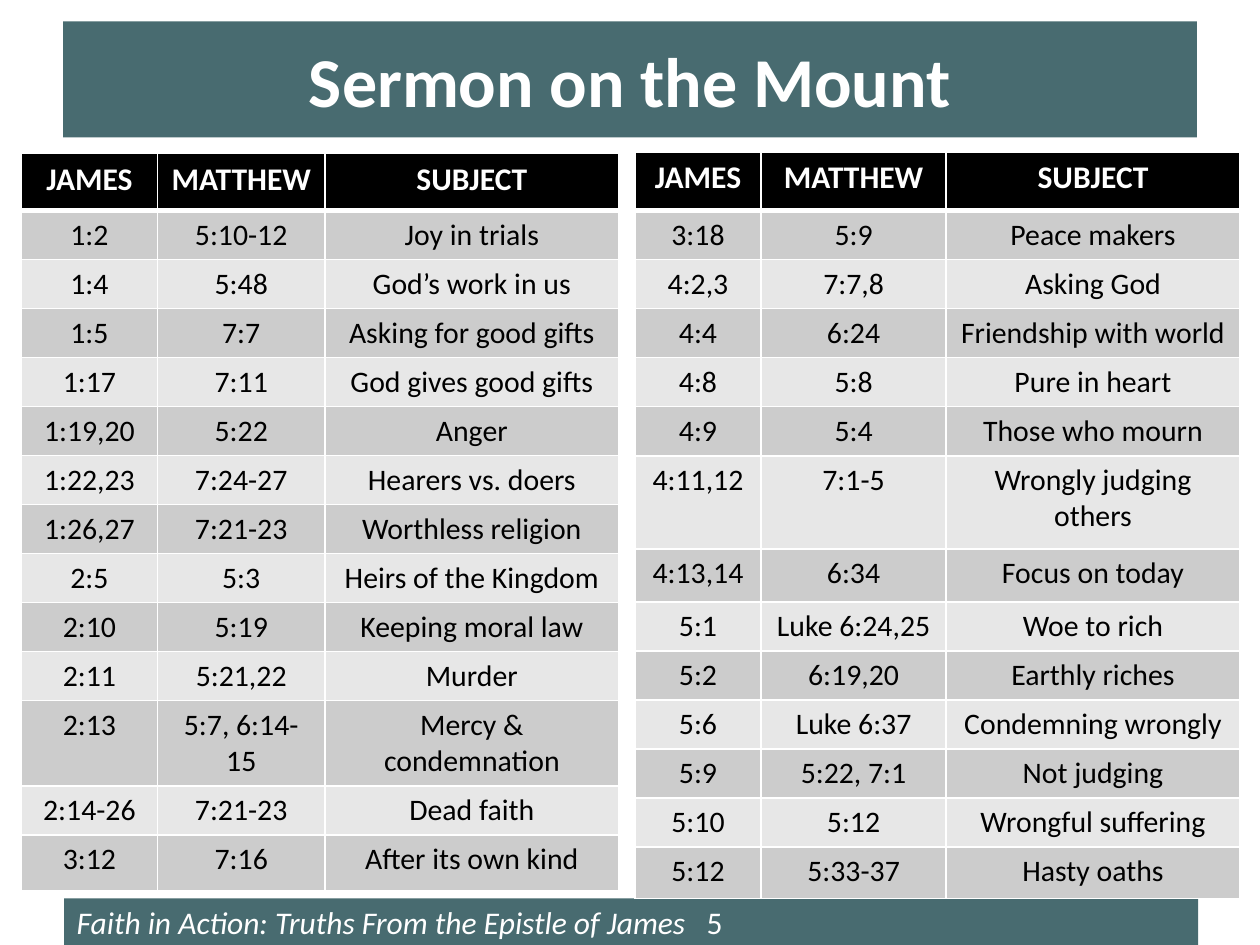
from pptx import Presentation
from pptx.dml.color import RGBColor
from pptx.enum.shapes import MSO_SHAPE
from pptx.enum.text import MSO_ANCHOR, PP_ALIGN
from pptx.oxml.ns import qn
from pptx.util import Inches, Pt
from lxml.etree import SubElement

COLORS = {"teal": "486B70", "white": "FFFFFF", "black": "000000",
          "dark_band": "CCCCCC", "light_band": "E7E7E7"}
FORMATS = {
    "title": {"size": Pt(40), "bold": True, "color": "white"},
    "footer": {"size": Pt(18), "italic": True, "color": "white"},
    "page_number": {"size": Pt(18), "italic": False, "color": "white"},
    "header": {"size": Pt(18), "bold": True, "color": "white"},
    "body": {"size": Pt(17), "bold": False, "color": "black"},
}
HEADINGS = ("JAMES", "MATTHEW", "SUBJECT")
EARLY_PARALLELS = [
    ("1:2", "5:10-12", "Joy in trials"),
    ("1:4", "5:48", "God’s work in us"),
    ("1:5", "7:7", "Asking for good gifts"),
    ("1:17", "7:11", "God gives good gifts"),
    ("1:19,20", "5:22", "Anger"),
    ("1:22,23", "7:24-27", "Hearers vs. doers"),
    ("1:26,27", "7:21-23", "Worthless religion"),
    ("2:5", "5:3", "Heirs of the Kingdom"),
    ("2:10", "5:19", "Keeping moral law"),
    ("2:11", "5:21,22", "Murder"),
    ("2:13", "5:7, 6:14-15", "Mercy & condemnation"),
    ("2:14-26", "7:21-23", "Dead faith"),
    ("3:12", "7:16", "After its own kind"),
]
LATE_PARALLELS = [
    ("3:18", "5:9", "Peace makers"),
    ("4:2,3", "7:7,8", "Asking God"),
    ("4:4", "6:24", "Friendship with world"),
    ("4:8", "5:8", "Pure in heart"),
    ("4:9", "5:4", "Those who mourn"),
    ("4:11,12", "7:1-5", "Wrongly judging others"),
    ("4:13,14", "6:34", "Focus on today"),
    ("5:1", "Luke 6:24,25", "Woe to rich"),
    ("5:2", "6:19,20", "Earthly riches"),
    ("5:6", "Luke 6:37", "Condemning wrongly"),
    ("5:9", "5:22, 7:1", "Not judging"),
    ("5:10", "5:12", "Wrongful suffering"),
    ("5:12", "5:33-37", "Hasty oaths"),
]
EARLY_HEIGHTS = [0.45] + [0.34] * 12 + [0.44]
LATE_HEIGHTS = [0.46, 0.39, 0.39, 0.39, 0.34, 0.39, 0.74,
                0.42, 0.33, 0.37, 0.32, 0.27, 0.38, 0.41]


class SlideBuilder:
    def __init__(self, page, font_name="Calibri"):
        self.page = page
        self.font_name = font_name

    def color(self, name):
        return RGBColor.from_string(COLORS[name])

    def paint(self, item, color):
        item.fill.solid()
        item.fill.fore_color.rgb = self.color(color)

    def add_span(self, para, text, style):
        span = para.add_run()
        span.text = text
        span.font.name = self.font_name
        for name, value in FORMATS[style].items():
            if name == "color":
                span.font.color.rgb = self.color(value)
            else:
                setattr(span.font, name, value)

    def title(self, text, left, top, width, height):
        box = self.page.shapes.title
        places = {"left": left, "top": top, "width": width, "height": height}
        for name, value in places.items():
            setattr(box, name, Inches(value))
        self.paint(box, "teal")
        box.text_frame.vertical_anchor = MSO_ANCHOR.MIDDLE
        para = box.text_frame.paragraphs[0]
        para.alignment = PP_ALIGN.CENTER
        self.add_span(para, text, "title")

    def footer(self, text, number, *place):
        box = self.page.shapes.add_shape(MSO_SHAPE.RECTANGLE, *map(Inches, place))
        box.shadow.inherit = False
        self.paint(box, "teal")
        box.line.fill.background()
        box.text_frame.word_wrap = True
        box.text_frame.vertical_anchor = MSO_ANCHOR.MIDDLE
        para = box.text_frame.paragraphs[0]
        para.alignment = PP_ALIGN.LEFT
        self.add_span(para, text + "\t", "footer")
        self.add_span(para, number, "page_number")

    def cell_borders(self, cell, top, bottom):
        """Draw white cell edges; top and bottom are widths in points."""
        properties = cell._tc.get_or_add_tcPr()
        for edge, width in (("L", 1), ("R", 1), ("T", top), ("B", bottom)):
            line = SubElement(properties, qn(f"a:ln{edge}"), w=str(Pt(width)))
            fill = SubElement(line, qn("a:solidFill"))
            SubElement(fill, qn("a:srgbClr"), val=COLORS["white"])

    def table(self, rows, left, top, widths, heights, frame_height):
        frame = self.page.shapes.add_table(
            len(rows), len(widths), Inches(left), Inches(top),
            Inches(sum(widths)), Inches(frame_height))
        grid = frame.table
        for column, width in zip(grid.columns, widths):
            column.width = Inches(width)
        for row, height in zip(grid.rows, heights):
            row.height = Inches(height)
        frame.height = Inches(frame_height)
        for r, values in enumerate(rows):
            band = "black" if r == 0 else "dark_band" if r % 2 else "light_band"
            for c, text in enumerate(values):
                cell = grid.cell(r, c)
                self.cell_borders(cell, 3 if r == 1 else 1, 3 if r == 0 else 1)
                self.paint(cell, band)
                para = cell.text_frame.paragraphs[0]
                para.alignment = PP_ALIGN.CENTER
                self.add_span(para, text, "body" if r else "header")


def main():
    deck = Presentation()
    deck.slide_width, deck.slide_height = Inches(10), Inches(7.5)
    builder = SlideBuilder(deck.slides.add_slide(deck.slide_layouts[5]))
    builder.footer("Faith in Action: Truths From the Epistle of James", "5",
                   0.51, 7.13, 9, 0.37)
    builder.title("Sermon on the Mount", 0.5, 0.17, 9, 0.92)
    builder.table([HEADINGS] + EARLY_PARALLELS, 0.17, 1.22,
                  (1.08, 1.33, 2.33), EARLY_HEIGHTS, 5.77)
    builder.table([HEADINGS] + LATE_PARALLELS, 5.04, 1.21,
                  (1, 1.47, 2.33), LATE_HEIGHTS, 5.87)
    deck.save("out.pptx")


if __name__ == "__main__":
    main()
